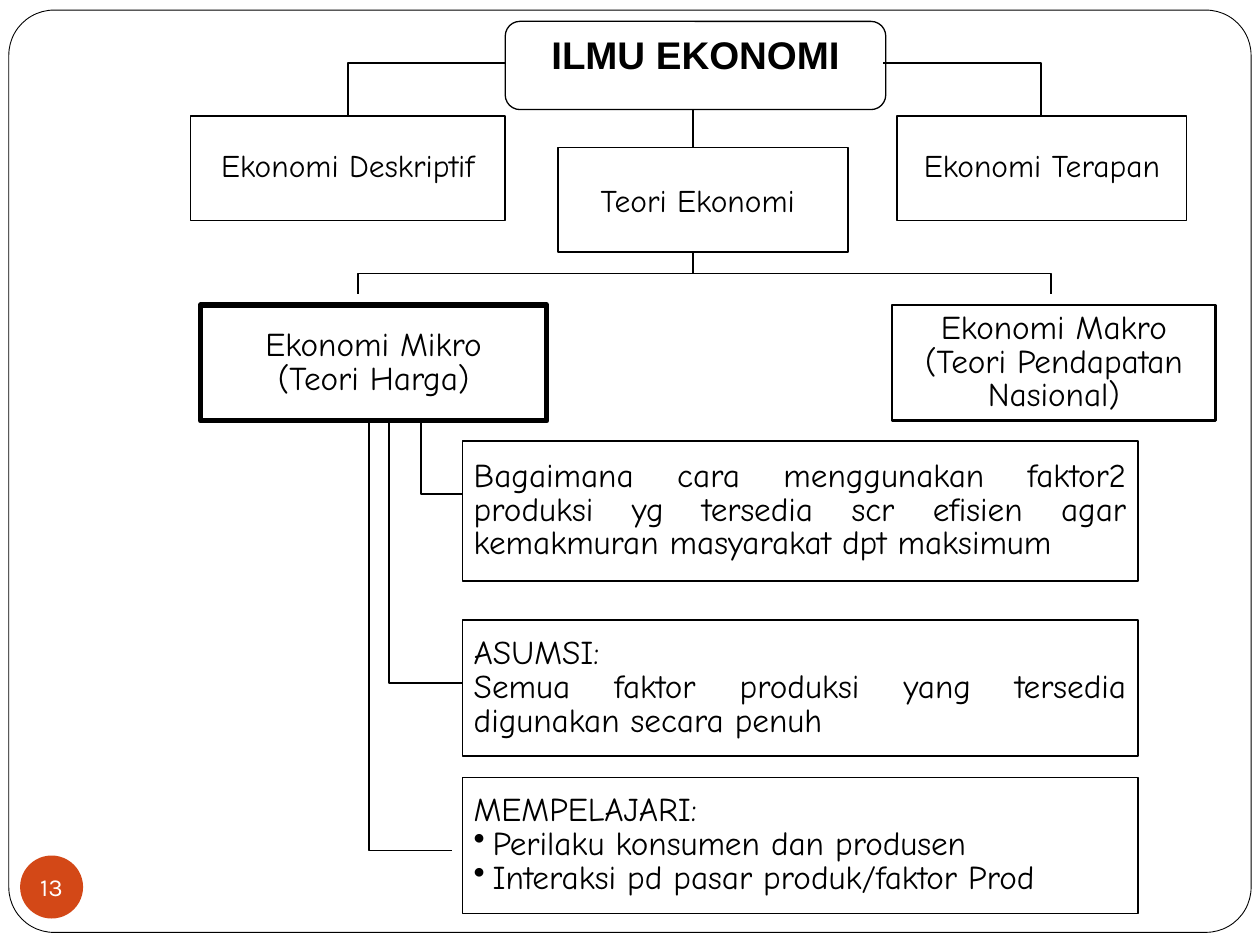
from dataclasses import dataclass

from lxml.etree import SubElement
from pptx import Presentation
from pptx.dml.color import RGBColor
from pptx.enum.shapes import MSO_CONNECTOR, MSO_SHAPE
from pptx.enum.text import MSO_ANCHOR, PP_ALIGN
from pptx.oxml.ns import qn
from pptx.shapes.autoshape import Shape
from pptx.slide import Slide
from pptx.util import Inches, Pt

COLOURS = {"ink": "000000", "paper": "FFFFFF", "badge": "D34817"}
BULLET = "•"
BULLET_INDENT = Inches(0.15)
BRANCH_TOP = 3.33


@dataclass
class Box:
    left: float
    top: float
    width: float
    height: float
    lines: tuple[str, ...] = ()
    size: float = 19
    border: float = 1
    align: PP_ALIGN = PP_ALIGN.CENTER
    line_spacing: float | None = 0.85
    font: str = "Comic Neue"
    bold: bool = False
    space_before: float = 0
    anchor: MSO_ANCHOR = MSO_ANCHOR.MIDDLE
    preset: MSO_SHAPE = MSO_SHAPE.RECTANGLE
    corner: float | None = None
    fill: str = "paper"
    text_colour: str = "ink"
    wrap: bool = True
    hanging: bool = False


def detail(top: float, height: float, *lines: str, hanging: bool = False) -> Box:
    """Describe one of the wide boxes that explain microeconomics."""
    return Box(3.67, top, 5.36, height, lines, align=PP_ALIGN.JUSTIFY, hanging=hanging)


FRAME = Box(0.07, 0.08, 9.86, 7.32, border=0.5,
            preset=MSO_SHAPE.ROUNDED_RECTANGLE, corner=0.049)
PAGE_BADGE = Box(0.16, 6.79, 0.5, 0.5, ("13",), 14, 0, font="Karla", line_spacing=None,
                 preset=MSO_SHAPE.OVAL, fill="badge", text_colour="paper", wrap=False)
CHART_BOXES = (
    Box(4.01, 0.17, 3.02, 0.7, ("ILMU EKONOMI",), 22, 0.75, line_spacing=None,
        font="Arial", bold=True, space_before=5.2, anchor=MSO_ANCHOR.TOP,
        preset=MSO_SHAPE.ROUNDED_RECTANGLE, corner=0.167),
    Box(1.51, 0.92, 2.5, 0.83, ("Ekonomi Deskriptif",), 18, 0.75),
    Box(4.43, 1.17, 2.3, 0.83, ("Teori Ekonomi ",), 18, 0.75, line_spacing=None),
    Box(7.12, 0.92, 2.3, 0.83, ("Ekonomi Terapan",), 18, 0.75),
    Box(1.59, 2.42, 2.75, 0.92, ("Ekonomi Mikro", "(Teori Harga)"), border=3),
    Box(7.08, 2.42, 2.57, 0.92, ("Ekonomi Makro", "(Teori Pendapatan Nasional)"),
        border=1.5),
    detail(3.5, 1.11, "Bagaimana cara menggunakan faktor2 produksi yg tersedia scr "
           "efisien agar kemakmuran masyarakat dpt maksimum "),
    detail(4.92, 1.08, "ASUMSI:",
           "Semua faktor produksi yang tersedia digunakan secara penuh"),
    detail(6.17, 1.08, "MEMPELAJARI:", BULLET + "Perilaku konsumen dan produsen",
           BULLET + "Interaksi pd pasar produk/faktor Prod", hanging=True),
)
# Each branch leaves the micro box at x, drops to y and runs to an end x.
DETAIL_BRANCHES = ((3.34, 3.92, 3.67), (3.09, 5.42, 3.67), (2.93, 6.75, 3.59))
BRACKETS = (
    ((2.76, 0.92), (2.76, 0.5), (4.01, 0.5)),
    ((8.26, 0.92), (8.26, 0.5), (7.01, 0.5)),
    ((2.84, 2.33), (2.84, 2.17), (8.34, 2.17), (8.34, 2.33)),
    *(((x, BRANCH_TOP), (x, y), (end, y)) for x, y, end in DETAIL_BRANCHES),
)


def colour(name: str) -> RGBColor:
    return RGBColor.from_string(COLOURS[name])


def write_text(shape: Shape, box: Box) -> None:
    frame = shape.text_frame
    frame.word_wrap = box.wrap
    frame.vertical_anchor = box.anchor
    frame.margin_left = frame.margin_right = Inches(0.09)
    frame.margin_top = frame.margin_bottom = Inches(0.04)
    for index, line in enumerate(box.lines):
        paragraph = frame.add_paragraph() if index else frame.paragraphs[0]
        paragraph.alignment = box.align
        paragraph.space_before = Pt(box.space_before)
        if box.line_spacing:
            paragraph.line_spacing = box.line_spacing
        if box.hanging:
            properties = paragraph._p.get_or_add_pPr()
            properties.set("marL", str(BULLET_INDENT))
            properties.set("indent", str(-BULLET_INDENT))
            if line.startswith(BULLET):
                SubElement(properties, qn("a:buChar")).set("char", BULLET)
        run = paragraph.add_run()
        run.text = line.removeprefix(BULLET)
        run.font.name = box.font
        run.font.size = Pt(box.size)
        run.font.bold = box.bold
        run.font.color.rgb = colour(box.text_colour)


def draw_box(slide: Slide, box: Box) -> None:
    shape = slide.shapes.add_shape(box.preset, Inches(box.left), Inches(box.top),
                                   Inches(box.width), Inches(box.height))
    shape.shadow.inherit = False
    if box.corner is not None:
        shape.adjustments[0] = box.corner
    shape.fill.solid()
    shape.fill.fore_color.rgb = colour(box.fill)
    if box.border:
        shape.line.color.rgb = colour("ink")
        shape.line.width = Pt(box.border)
    else:
        shape.line.fill.background()
    if box.lines:
        write_text(shape, box)


def draw_bracket(slide: Slide, points: tuple[tuple[float, float], ...]) -> None:
    """Draw an open angled line through points given in inches."""
    start, *rest = [(Inches(x), Inches(y)) for x, y in points]
    builder = slide.shapes.build_freeform(*start)
    builder.add_line_segments(rest, close=False)
    shape = builder.convert_to_shape()
    shape.shadow.inherit = False
    shape.fill.background()
    shape.line.color.rgb = colour("ink")
    shape.line.width = Pt(1)


def draw_trunk(slide: Slide) -> None:
    """Draw the vertical line that runs behind the title and theory boxes."""
    trunk = slide.shapes.add_connector(MSO_CONNECTOR.STRAIGHT, Inches(5.5), Inches(0.83),
                                       Inches(5.5), Inches(2.17))
    trunk.line.color.rgb = colour("ink")
    trunk.line.width = Pt(1)
    SubElement(trunk._element.spPr, qn("a:effectLst"))


def main() -> None:
    presentation = Presentation()
    presentation.slide_width = Inches(10)
    presentation.slide_height = Inches(7.5)
    slide = presentation.slides.add_slide(presentation.slide_layouts[6])
    draw_box(slide, FRAME)
    draw_box(slide, PAGE_BADGE)
    draw_trunk(slide)
    for box in CHART_BOXES:
        draw_box(slide, box)
    for points in BRACKETS:
        draw_bracket(slide, points)
    presentation.save("out.pptx")


if __name__ == "__main__":
    main()
